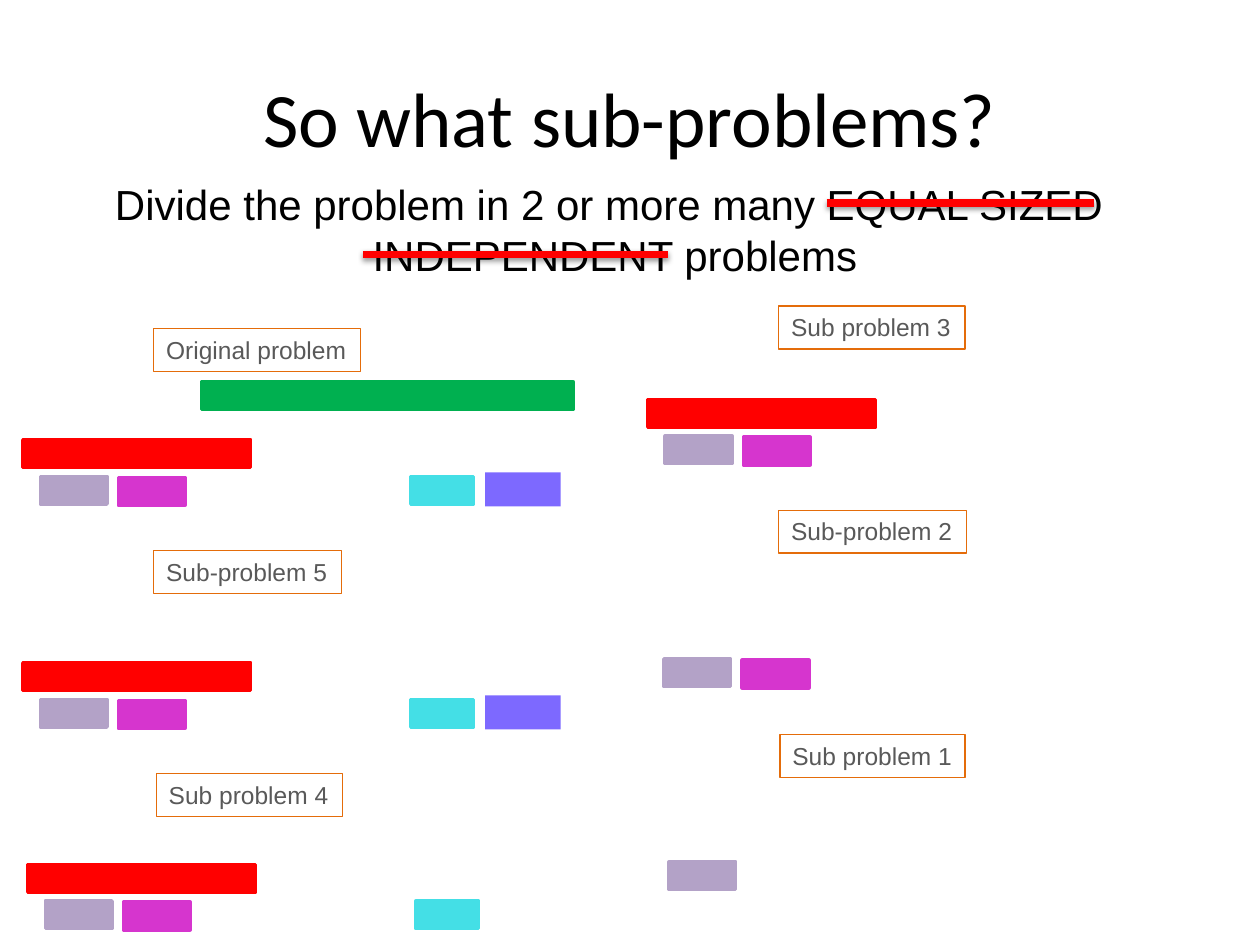
from lxml import etree
from pptx import Presentation
from pptx.dml.color import RGBColor
from pptx.enum.shapes import MSO_CONNECTOR, MSO_SHAPE
from pptx.enum.text import MSO_ANCHOR, MSO_AUTO_SIZE, PP_ALIGN
from pptx.oxml.ns import qn
from pptx.util import Inches, Pt

RECTANGLE = MSO_SHAPE.RECTANGLE
STRAIGHT = MSO_CONNECTOR.STRAIGHT
CENTER, LEFT = PP_ALIGN.CENTER, PP_ALIGN.LEFT
MIDDLE, TOP = MSO_ANCHOR.MIDDLE, MSO_ANCHOR.TOP
GROW, FIXED = MSO_AUTO_SIZE.SHAPE_TO_FIT_TEXT, MSO_AUTO_SIZE.NONE

BLACK = RGBColor(0x00, 0x00, 0x00)
GRAY = RGBColor(0x59, 0x59, 0x59)
ORANGE = RGBColor(0xE4, 0x6C, 0x0A)
RED = RGBColor(0xFF, 0x00, 0x00)
GREEN = RGBColor(0x00, 0xB0, 0x50)
VIOLET = RGBColor(0x7D, 0x69, 0xFF)
MAUVE = RGBColor(0xB3, 0xA2, 0xC7)
MAGENTA = RGBColor(0xD6, 0x35, 0xCE)
CYAN = RGBColor(0x44, 0xDF, 0xE6)

# Bars of a problem: offset from the problem's corner, size, colour, outlined
BARS = {
    "red": (0, 0, 1.81, 0.22, RED, True),
    "violet": (3.67, 0.26, 0.6, 0.27, VIOLET, False),
    "mauve": (0.14, 0.29, 0.53, 0.22, MAUVE, True),
    "magenta": (0.76, 0.3, 0.53, 0.22, MAGENTA, True),
    "cyan": (3.08, 0.29, 0.5, 0.22, CYAN, True),
    "green": (1.42, -0.46, 2.95, 0.22, GREEN, True),
}

# Problems: caption, caption box (left, top, width), bar corner, bars
PROBLEMS = [
    ("Original problem", (1.22, 2.61, 1.64), (0.18, 3.49),
     ["red", "violet", "mauve", "magenta", "cyan", "green"]),
    ("Sub-problem 5", (1.22, 4.37, 1.49), (0.18, 5.26),
     ["red", "violet", "mauve", "magenta", "cyan"]),
    ("Sub problem 4", (1.24, 6.14, 1.48), (0.22, 6.86),
     ["red", "mauve", "magenta", "cyan"]),
    ("Sub problem 3", (6.18, 2.43, 1.48), (5.14, 3.17),
     ["red", "mauve", "magenta"]),
    ("Sub-problem 2", (6.18, 4.05, 1.49), (5.13, 4.94), ["mauve", "magenta"]),
    ("Sub problem 1", (6.19, 5.83, 1.47), (5.17, 6.55), ["mauve"]),
]


class SlideBuilder:
    def __init__(self, page):
        self.page = page
        self.formats = {
            "title": {"name": "Calibri", "size": Pt(44)},
            "body": {"name": "Arial", "size": Pt(24)},
            "caption": {"name": "Arial", "size": Pt(14)},
        }

    def text(self, shapes, lines, area, style, color, align, **frame_format):
        box = shapes.add_textbox(*map(Inches, area))
        frame = box.text_frame
        for name, value in frame_format.items():
            setattr(frame, name, value)
        for index, line in enumerate(lines):
            para = frame.paragraphs[0] if index == 0 else frame.add_paragraph()
            para.alignment = align
            span = para.add_run()
            span.text = line
            for name, value in self.formats[style].items():
                setattr(span.font, name, value)
            span.font.color.rgb = color
        return box

    def strike(self, left, right, y):
        line = self.page.shapes.add_connector(
            STRAIGHT, Inches(left), Inches(y), Inches(right), Inches(y))
        line.line.color.rgb = RED
        line.line.width = Pt(4.5)
        effects = etree.SubElement(line._element.spPr, qn("a:effectLst"))
        shadow = etree.SubElement(
            effects, qn("a:outerShdw"), blurRad=str(Pt(3.1)),
            dist=str(Pt(1.6)), dir="5400000", rotWithShape="0")
        color = etree.SubElement(shadow, qn("a:srgbClr"), val=str(BLACK))
        etree.SubElement(color, qn("a:alpha"), val="38000")

    def bar(self, shapes, area, color, outlined):
        bar = shapes.add_shape(RECTANGLE, *map(Inches, area))
        bar.shadow.inherit = False
        bar.fill.solid()
        bar.fill.fore_color.rgb = color
        if outlined:
            bar.line.color.rgb = color
            bar.line.width = Pt(2)
        else:
            bar.line.fill.background()

    def problem(self, caption, caption_area, corner, bars):
        shapes = self.page.shapes.add_group_shape().shapes
        for name in bars:
            dx, dy, width, height, color, outlined = BARS[name]
            area = (corner[0] + dx, corner[1] + dy, width, height)
            self.bar(shapes, area, color, outlined)
        box = self.text(shapes, [caption], (*caption_area, 0.34), "caption",
                        GRAY, LEFT, word_wrap=False, auto_size=GROW,
                        vertical_anchor=TOP)
        box.line.color.rgb = ORANGE
        box.line.width = Pt(0.75)


def main():
    deck = Presentation()
    deck.slide_width, deck.slide_height = Inches(10), Inches(7.5)
    page = deck.slides.add_slide(deck.slide_layouts[6])
    builder = SlideBuilder(page)

    # Title and statement
    builder.text(page.shapes, ["So what sub-problems?"], (0.5, 0.3, 9, 1.25),
                 "title", BLACK, CENTER, word_wrap=True, auto_size=FIXED,
                 vertical_anchor=MIDDLE)
    builder.text(page.shapes,
                 ["Divide the problem in 2 or more many EQUAL SIZED ",
                  "INDEPENDENT problems"],
                 (0.77, 1.37, 8.22, 0.91), "body", BLACK, CENTER,
                 word_wrap=False, auto_size=GROW, vertical_anchor=TOP)

    # Struck-out words
    builder.strike(6.56, 8.68, 1.61)
    builder.strike(2.88, 5.3, 2.02)

    # Problem and its sub-problems
    for problem in PROBLEMS:
        builder.problem(*problem)

    deck.save("out.pptx")


if __name__ == "__main__":
    main()
